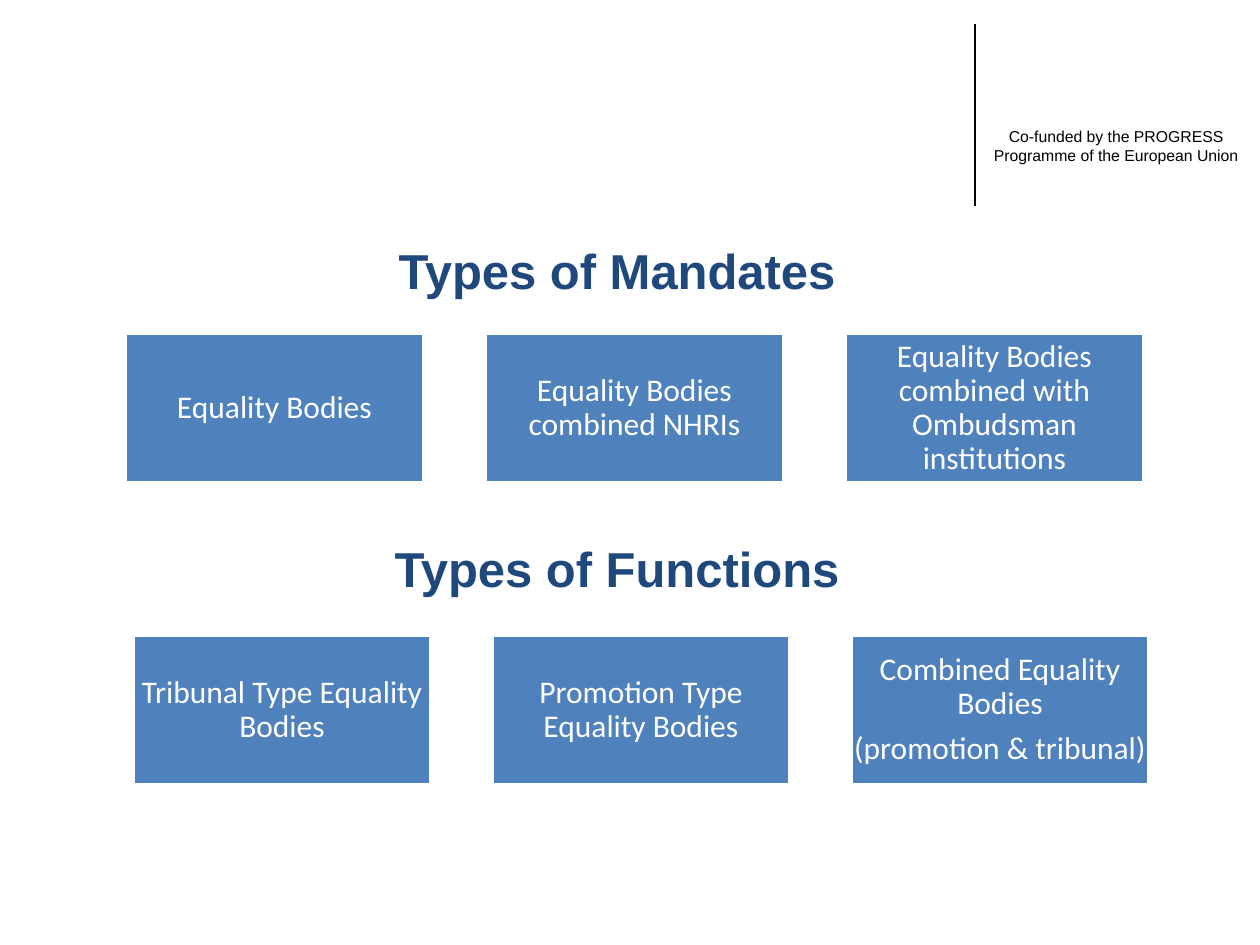
from dataclasses import dataclass

from lxml.etree import SubElement
from pptx import Presentation
from pptx.dml.color import RGBColor
from pptx.enum.shapes import MSO_CONNECTOR as Connector, MSO_SHAPE as Shape
from pptx.enum.text import MSO_ANCHOR as Anchor, MSO_AUTO_SIZE as AutoSize, PP_ALIGN as Align
from pptx.oxml.ns import qn
from pptx.util import Emu, Pt

PX_PER_INCH = 126
NAVY, BLUE, WHITE, BLACK = "1F497D", "4F81BD", "FFFFFF", "000000"


@dataclass(frozen=True)
class BoxRow:
    left: int
    top: int
    width: int
    pitch: int
    labels: tuple[tuple[str, ...], ...]


MANDATES = BoxRow(126, 334, 297, 360, (
    ("Equality Bodies",),
    ("Equality Bodies combined NHRIs",),
    ("Equality Bodies combined with Ombudsman institutions",),
))
FUNCTIONS = BoxRow(134, 636, 296, 359, (
    ("Tribunal Type Equality Bodies",),
    ("Promotion Type Equality Bodies",),
    ("Combined Equality Bodies", "(promotion & tribunal)"),
))
BOX_HEIGHT = 148


def px(length: int) -> Emu:
    return Emu(round(length * 914400 / PX_PER_INCH))


def color(value: str) -> RGBColor:
    return RGBColor.from_string(value)


def add_text(paragraph, text: str, size: int, font: str, ink: str, bold: bool = False) -> None:
    paragraph.alignment = Align.CENTER
    run = paragraph.add_run()
    run.text = text
    run.font.size = Pt(size)
    run.font.name = font
    run.font.bold = bold
    run.font.color.rgb = color(ink)


def place(shape, left: int, top: int, width: int, height: int) -> None:
    shape.left, shape.top, shape.width, shape.height = map(px, (left, top, width, height))


def fill_heading(shape, text: str, top: int) -> None:
    place(shape, 86, top, 1062, 72)
    frame = shape.text_frame
    frame.word_wrap = True
    frame.auto_size = AutoSize.NONE
    frame.vertical_anchor = Anchor.TOP
    add_text(frame.paragraphs[0], text, 28, "Arial", NAVY, bold=True)


def add_box(slide, left: int, top: int, width: int, lines: tuple[str, ...]) -> None:
    box = slide.shapes.add_shape(Shape.RECTANGLE, px(left), px(top), px(width), px(BOX_HEIGHT))
    box.shadow.inherit = False
    box.fill.solid()
    box.fill.fore_color.rgb = color(BLUE)
    box.line.color.rgb = color(WHITE)
    box.line.width = Pt(1)
    frame = box.text_frame
    frame.word_wrap = True
    frame.vertical_anchor = Anchor.MIDDLE
    frame.margin_left = frame.margin_right = frame.margin_top = frame.margin_bottom = px(1)
    for index, line in enumerate(lines):
        paragraph = frame.add_paragraph() if index else frame.paragraphs[0]
        paragraph.line_spacing = 0.9
        paragraph.space_after = Pt(6.3)
        add_text(paragraph, line, 18, "Calibri", WHITE)


def add_row(slide, row: BoxRow) -> None:
    for column, lines in enumerate(row.labels):
        add_box(slide, row.left + column * row.pitch, row.top, row.width, lines)


def add_funding_note(slide) -> None:
    rule = slide.shapes.add_connector(Connector.STRAIGHT, px(975), px(24), px(975), px(206))
    rule.line.color.rgb = color(BLACK)
    rule.line.width = Pt(1)
    SubElement(rule._element.spPr, qn("a:effectLst"))
    note = slide.shapes.add_textbox(px(980), px(121), px(272), px(50))
    note.text_frame.word_wrap = True
    add_text(note.text_frame.paragraphs[0],
             "Co-funded by the PROGRESS Programme of the European Union", 9, "Arial", BLACK)


def main() -> None:
    deck = Presentation()
    deck.slide_width, deck.slide_height = px(1260), px(945)
    slide = deck.slides.add_slide(deck.slide_layouts[5])

    # Header
    add_funding_note(slide)

    # Mandates
    fill_heading(slide.shapes.title, "Types of Mandates", 234)
    add_row(slide, MANDATES)

    # Functions
    functions_heading = slide.shapes.add_textbox(0, 0, 0, 0)
    fill_heading(functions_heading, "Types of Functions", 532)
    add_row(slide, FUNCTIONS)

    deck.save("out.pptx")


if __name__ == "__main__":
    main()
